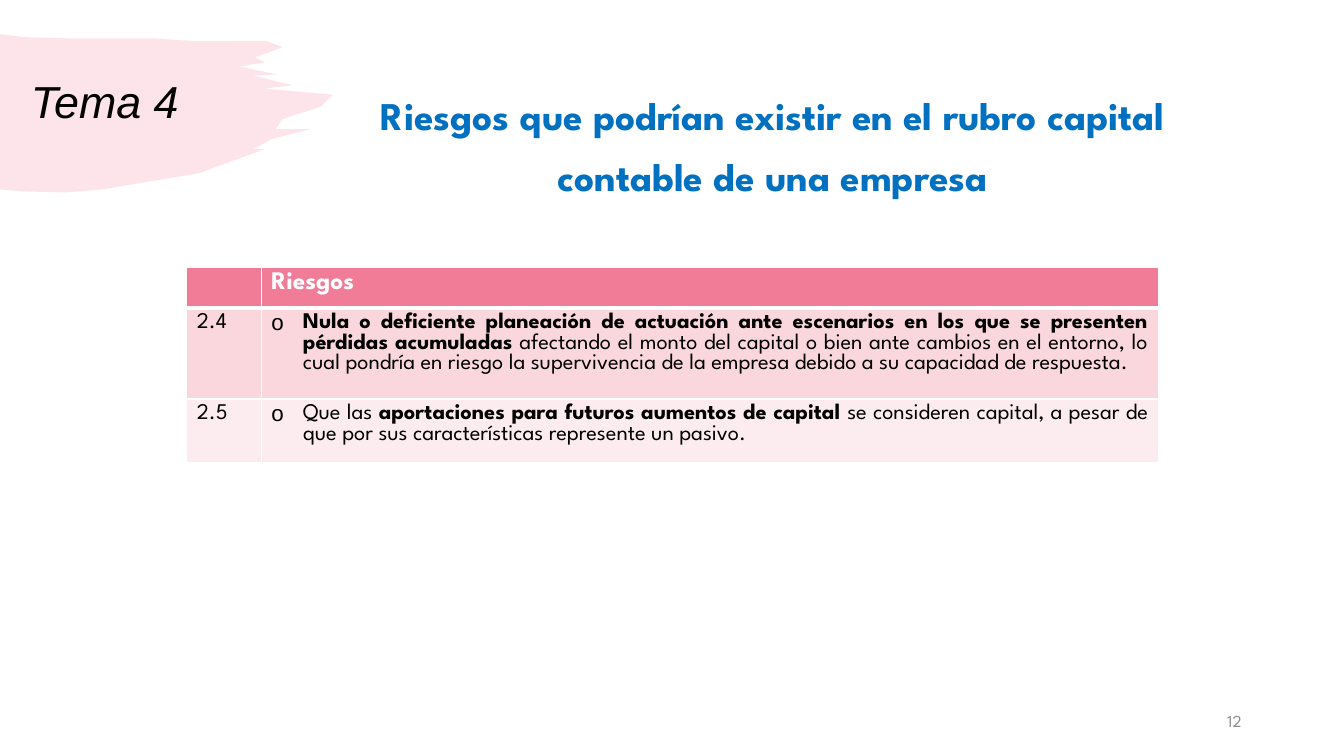
from pptx import Presentation
from pptx.dml.color import RGBColor
from pptx.enum.text import MSO_ANCHOR, PP_ALIGN
from pptx.oxml.ns import qn
from pptx.util import Pt
from lxml.etree import SubElement

# Content
TOPIC = "Tema 4"
HEADING = "Riesgos que podrían existir en el rubro capital contable de una empresa"
PAGE = "12"
RISK_HEADER = "Riesgos"
RISKS = [  # number, [(text, bold)]
    ("2.4", [
        ("Nula o deficiente planeación de actuación ante escenarios en los que "
         "se presenten pérdidas acumuladas", True),
        (" afectando el monto del capital o bien ante cambios en el entorno, lo cual "
         "pondría en riesgo la supervivencia de la empresa debido a su capacidad de "
         "respuesta.", False)]),
    ("2.5", [
        ("Que las ", False),
        ("aportaciones para futuros aumentos de capital ", True),
        ("se consideren capital, a pesar de que por sus características represente "
         "un pasivo.", False)]),
]

# Brush stroke outline in points, clockwise from the top left
BRUSH = [
    (0, 24.5), (18, 26.6), (48, 27.4), (109, 27.4), (140, 29.5), (190, 29.2),
    (202, 33.8), (182, 41), (189, 44.6), (171, 47.5), (198, 53.3), (181, 54),
    (209, 61), (189, 63.4), (238, 67.7), (229, 76.3), (202, 85), (197, 92.2),
    (222, 92.2), (194, 99.4), (181, 106.6), (189, 106.6), (142, 123.8),
    (73, 135.4), (47, 137.5), (17, 136.8), (0, 135.4),
]

THEME = {
    "display": "Arial", "body": "League Spartan",
    "pink": "F07C98", "bands": ["F9D7DD", "FCECEF"], "white": "FFFFFF",
    "black": "000000", "blue": "0070C0", "gray": "8C8C8C",
    "topic": 32, "heading": 28, "header": 18, "risk": 16, "page": 12,
}
COLUMNS = [53.3, 640.8]
ROWS = [29.2, 65, 45.6]
INDENT = 22.5


def color(name):
    return RGBColor.from_string(THEME.get(name, name))


def write(paragraph, text, size, ink, font="body", **traits):
    run = paragraph.add_run()
    run.text = text
    run.font.color.rgb = color(ink)
    values = {"size": Pt(THEME[size]), "name": THEME[font], "bold": False, **traits}
    for trait, value in values.items():
        setattr(run.font, trait, value)


def text_box(box, anchor, align, spacing):
    frame = slide.shapes.add_textbox(*map(Pt, box)).text_frame
    frame.word_wrap = True
    frame.vertical_anchor = anchor
    paragraph = frame.paragraphs[0]
    paragraph.alignment = align
    paragraph.line_spacing = spacing
    return paragraph


def finish_cell(cell, fill, bottom=1):
    cell.fill.solid()
    cell.fill.fore_color.rgb = color(fill)
    properties = cell._tc.get_or_add_tcPr()
    widths = {"a:lnL": 1, "a:lnR": 1, "a:lnT": 1, "a:lnB": bottom}
    for position, (side, width) in enumerate(widths.items()):
        border = properties.makeelement(qn(side), {"w": str(Pt(width))})
        ink = SubElement(SubElement(border, qn("a:solidFill")), qn("a:srgbClr"))
        ink.set("val", THEME["white"])
        properties.insert(position, border)


def add_bullet(paragraph):
    properties = paragraph._p.get_or_add_pPr()
    properties.set("marL", str(Pt(INDENT)))
    properties.set("indent", str(-Pt(INDENT)))
    SubElement(properties, qn("a:buFont")).set("typeface", THEME["display"])
    SubElement(properties, qn("a:buChar")).set("char", "o")


deck = Presentation()
deck.slide_width, deck.slide_height = Pt(960), Pt(540)
slide = deck.slides.add_slide(deck.slide_layouts[6])

# Brush stroke
start, *edge = [(Pt(x), Pt(y)) for x, y in BRUSH]
builder = slide.shapes.build_freeform(*start)
builder.add_line_segments(edge, close=True)
brush = builder.convert_to_shape()
brush.shadow.inherit = False
brush.line.fill.background()
brush.fill.solid()
brush.fill.fore_color.rgb = color("pink")
tint = brush._element.spPr.find(qn("a:solidFill"))[0]
SubElement(tint, qn("a:alpha")).set("val", "20000")

# Topic, heading and page number
topic = text_box((15, 41, 182, 66), MSO_ANCHOR.MIDDLE, PP_ALIGN.LEFT, 0.9)
write(topic, TOPIC, "topic", "black", "display", italic=True)
page = text_box((678, 500.4, 216, 28.8), MSO_ANCHOR.MIDDLE, PP_ALIGN.RIGHT, 1.0)
write(page, PAGE, "page", "gray")
heading = text_box((234.7, 51.8, 634.3, 74.9), MSO_ANCHOR.TOP, PP_ALIGN.CENTER, 1.3)
write(heading, HEADING, "heading", "blue", bold=True)

# Risk table
table = slide.shapes.add_table(
    len(ROWS), len(COLUMNS), Pt(133.4), Pt(190.8), Pt(sum(COLUMNS)), Pt(sum(ROWS))).table
for column, width in zip(table.columns, COLUMNS):
    column.width = Pt(width)
for row, height in zip(table.rows, ROWS):
    row.height = Pt(height)
for header_cell in table.rows[0].cells:
    finish_cell(header_cell, "pink", bottom=3)
write(table.cell(0, 1).text_frame.paragraphs[0], RISK_HEADER, "header", "white", bold=True)
for row, ((number, phrases), band) in enumerate(zip(RISKS, THEME["bands"]), 1):
    for column, parts in enumerate(([(number, False)], phrases)):
        cell = table.cell(row, column)
        finish_cell(cell, band)
        paragraph = cell.text_frame.paragraphs[0]
        paragraph.alignment = PP_ALIGN.JUSTIFY
        if column == 1:
            add_bullet(paragraph)
        for text, bold in parts:
            write(paragraph, text, "risk", "black", bold=bold)

deck.save("out.pptx")
